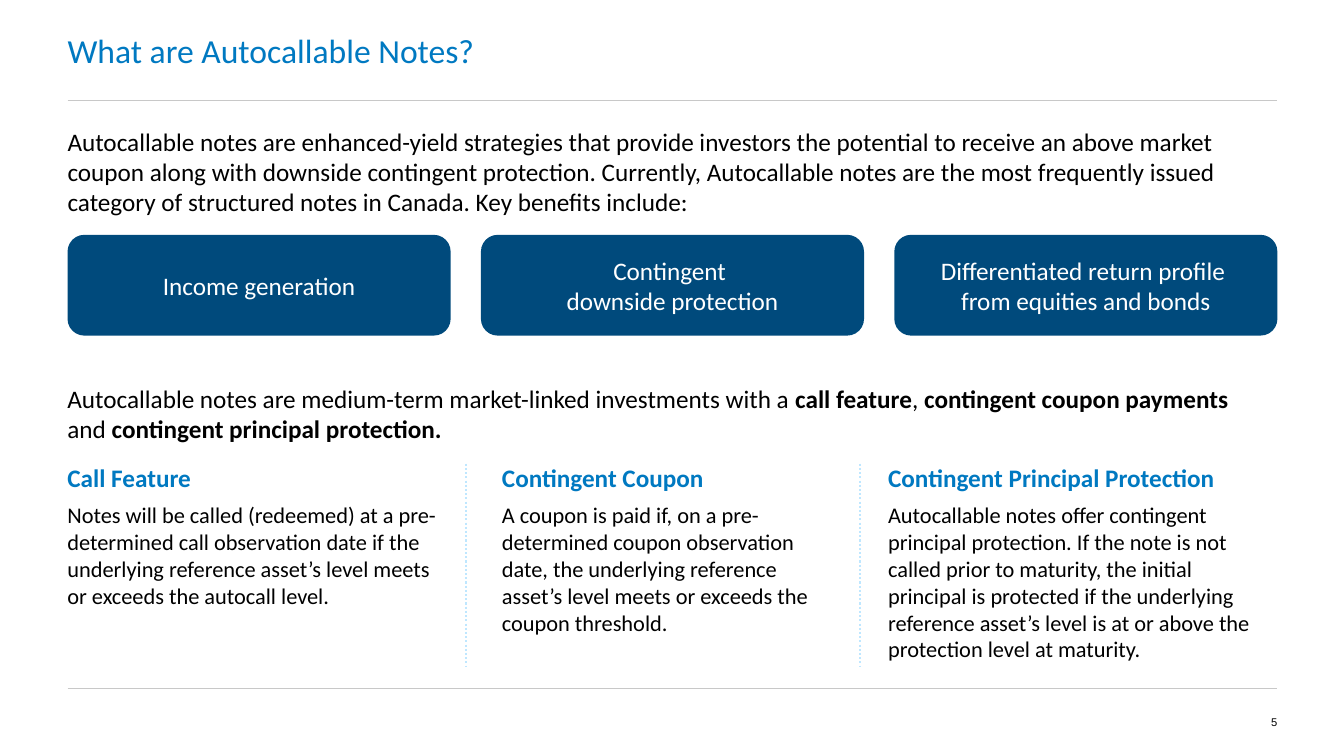
from dataclasses import dataclass

from lxml import etree
from pptx import Presentation
from pptx import util as u
from pptx.dml.color import RGBColor
from pptx.enum import dml, shapes, text
from pptx.oxml.ns import qn

PX = 9144  # EMU per px, 100 px to the inch


@dataclass(frozen=True)
class Theme:
    blue: str = "0079C1"
    navy: str = "004A7C"
    pale_blue: str = "BFE7FF"
    grey: str = "C8C8C8"
    black: str = "000000"
    white: str = "FFFFFF"
    font: str = "Calibri"
    number_font: str = "Arial"
    title: int = 24
    body: int = 18
    detail: int = 16
    number: int = 8


class SlideBuilder:
    def __init__(self, slide, theme):
        self.slide = slide
        self.theme = theme

    def style(self, paragraph, size, color, bold=None, font=None):
        paragraph.font.name = font or self.theme.font
        paragraph.font.size = u.Pt(size)
        paragraph.font.color.rgb = RGBColor.from_string(color)
        paragraph.font.bold = bold

    def text_box(self, box, inset=(0, 0), anchor=text.MSO_ANCHOR.TOP, grow=False):
        """Return the text frame of a new wrapping text box."""
        shape = self.slide.shapes.add_textbox(*(v * PX for v in box))
        frame = shape.text_frame
        frame.word_wrap = True
        frame.vertical_anchor = anchor
        frame.margin_left = frame.margin_right = inset[0] * PX
        frame.margin_top = frame.margin_bottom = inset[1] * PX
        if grow:
            frame.auto_size = text.MSO_AUTO_SIZE.SHAPE_TO_FIT_TEXT
        return frame

    def label(self, box, words, size, color, anchor=text.MSO_ANCHOR.TOP,
              align=text.PP_ALIGN.LEFT, font=None):
        paragraph = self.text_box(box, anchor=anchor).paragraphs[0]
        paragraph.text = words
        paragraph.alignment = align
        self.style(paragraph, size, color, font=font)

    def mixed_text(self, box, parts):
        """Add one paragraph whose parts alternate between regular and bold."""
        paragraph = self.text_box(box, inset=(10, 5), grow=True).paragraphs[0]
        for index, words in enumerate(parts):
            run = paragraph.add_run()
            run.text = words
            run.font.bold = index % 2 == 1
        self.style(paragraph, self.theme.body, self.theme.black)

    def feature(self, box, heading, detail):
        frame = self.text_box(box, inset=(10, 5), grow=True)
        frame.text = heading
        self.style(frame.paragraphs[0], self.theme.body, self.theme.blue, bold=True)
        paragraph = frame.add_paragraph()
        paragraph.text = detail
        paragraph.space_before = u.Pt(6)
        self.style(paragraph, self.theme.detail, self.theme.black)

    def benefit(self, box, words):
        shape = self.slide.shapes.add_shape(
            shapes.MSO_SHAPE.ROUNDED_RECTANGLE, *(v * PX for v in box))
        shape.shadow.inherit = False
        shape.fill.solid()
        shape.fill.fore_color.rgb = RGBColor.from_string(self.theme.navy)
        shape.line.fill.background()
        frame = shape.text_frame
        frame.word_wrap = True
        frame.vertical_anchor = text.MSO_ANCHOR.MIDDLE
        frame.margin_left = frame.margin_right = 0
        frame.margin_top = frame.margin_bottom = 0
        paragraph = frame.paragraphs[0]
        paragraph.text = words
        paragraph.alignment = text.PP_ALIGN.CENTER
        self.style(paragraph, self.theme.body, self.theme.white)

    def line(self, start, end, color, width, dash=None):
        connector = self.slide.shapes.add_connector(
            shapes.MSO_CONNECTOR.STRAIGHT, *(v * PX for v in start + end))
        connector.line.color.rgb = RGBColor.from_string(color)
        connector.line.width = u.Pt(width)
        if dash:
            connector.line.dash_style = dash
        etree.SubElement(connector.element.spPr, qn("a:effectLst"))


BENEFITS = [
    "Income generation",
    "Contingent \vdownside protection",
    "Differentiated return profile \vfrom equities and bonds",
]

FEATURES = [
    ((57, 454, 389, 183), "Call Feature",
     "Notes will be called (redeemed) at a pre-determined call observation date "
     "if the underlying reference asset’s level meets or exceeds the autocall level."),
    ((488, 454, 351, 183), "Contingent Coupon",
     "A coupon is paid if, on a pre-determined coupon observation date, the "
     "underlying reference asset’s level meets or exceeds the coupon threshold."),
    ((871, 454, 401, 210), "Contingent Principal Protection",
     "Autocallable notes offer contingent principal protection. If the note is not "
     "called prior to maturity, the initial principal is protected if the underlying "
     "reference asset’s level is at or above the protection level at maturity."),
]


def main():
    presentation = Presentation()
    presentation.slide_width = 1333 * PX
    presentation.slide_height = 750 * PX
    theme = Theme()
    builder = SlideBuilder(
        presentation.slides.add_slide(presentation.slide_layouts[6]), theme)

    for y in (683, 100):
        builder.line((67, y), (1267, y), theme.grey, 0.75)
    builder.label((67, 0, 1200, 100), "What are Autocallable Notes?",
                  theme.title, theme.blue, anchor=text.MSO_ANCHOR.MIDDLE)
    builder.label(
        (67, 125, 1200, 100),
        "Autocallable notes are enhanced-yield strategies that provide investors the "
        "potential to receive an above market coupon along with downside contingent "
        "protection. Currently, Autocallable notes are the most frequently issued "
        "category of structured notes in Canada. Key benefits include:",
        theme.body, theme.black)

    for column, words in enumerate(BENEFITS):
        builder.benefit((67 + 410 * column, 233, 380, 100), words)

    builder.mixed_text((57, 375, 1209, 71), [
        "Autocallable notes are medium-term market-linked investments with a ",
        "call feature", ", ", "contingent coupon payments ", "and ",
        "contingent principal protection."])

    for box, heading, detail in FEATURES:
        builder.feature(box, heading, detail)
    for x in (462, 853):
        builder.line((x, 460), (x, 661), theme.pale_blue, 1.5,
                     dml.MSO_LINE.ROUND_DOT)

    builder.label((1200, 683, 67, 67), "5", theme.number, theme.black,
                  anchor=text.MSO_ANCHOR.MIDDLE, align=text.PP_ALIGN.RIGHT,
                  font=theme.number_font)
    presentation.save("out.pptx")


if __name__ == "__main__":
    main()
